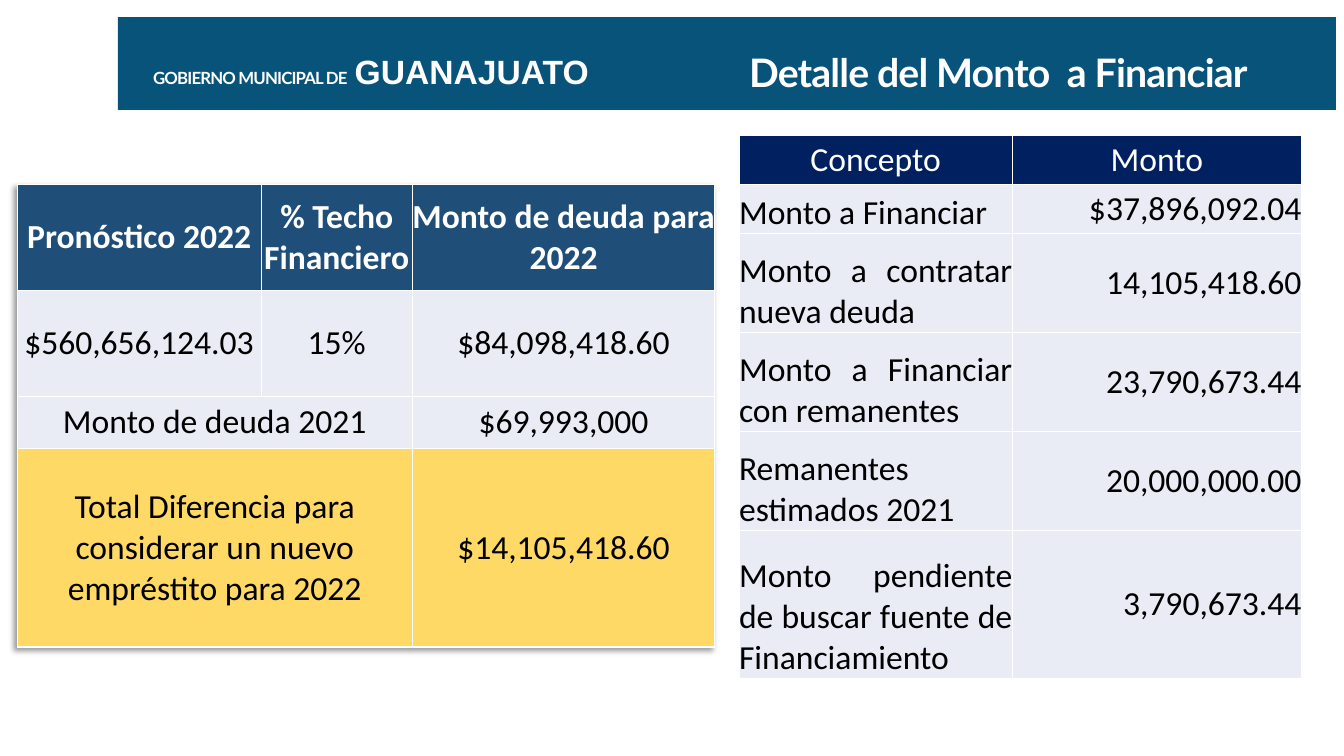
from lxml.etree import SubElement
from pptx import Presentation
from pptx.dml.color import RGBColor
from pptx.enum.shapes import MSO_SHAPE
from pptx.enum.text import MSO_ANCHOR, PP_ALIGN
from pptx.oxml import parse_xml
from pptx.oxml.ns import nsdecls, qn
from pptx.util import Inches, Pt

WHITE = RGBColor(0xFF, 0xFF, 0xFF)
BLACK = RGBColor(0x00, 0x00, 0x00)
BLUE = RGBColor(0x1F, 0x4E, 0x79)
NAVY = RGBColor(0x00, 0x20, 0x60)
PALE = RGBColor(0xE9, 0xEB, 0xF5)
GOLD = RGBColor(0xFF, 0xD9, 0x66)
TEAL = RGBColor(0x08, 0x53, 0x7A)

LATO = {"name": "Lato", "bold": True}
ARIAL = {"name": "Arial", "bold": True}
INSETS = {"margin_left": 0, "margin_right": 0, "margin_top": 0, "margin_bottom": 0}

DEBT = [
    ["Pronóstico 2022", "% Techo Financiero", "Monto de deuda para 2022"],
    ["$560,656,124.03", "15%", "$84,098,418.60"],
    ["Monto de deuda 2021", None, "$69,993,000"],
    ["Total Diferencia para considerar un nuevo empréstito para 2022", None,
     "$14,105,418.60"],
]
FUNDS = [
    ["Concepto", "Monto"],
    ["Monto a Financiar", "$37,896,092.04"],
    ["Monto a contratar nueva deuda", "14,105,418.60"],
    ["Monto a Financiar con remanentes", "23,790,673.44"],
    ["Remanentes estimados 2021", "20,000,000.00"],
    ["Monto pendiente de buscar fuente de Financiamiento", "3,790,673.44"],
]


def apply(item, values):
    for key, value in values.items():
        setattr(item, key, value)


def add_run(para, text, color, values, spacing=None):
    run = para.add_run()
    run.text = text
    apply(run.font, values)
    run.font.color.rgb = color
    if spacing is not None:
        run._r.get_or_add_rPr().set("spc", str(spacing))


def add_edges(cell):
    props = cell._tc.get_or_add_tcPr()
    for spot, side in enumerate(("lnL", "lnR", "lnT", "lnB")):
        props.insert(spot, parse_xml(
            f'<a:{side} {nsdecls("a")} w="12700"><a:solidFill>'
            f'<a:srgbClr val="{WHITE}"/></a:solidFill></a:{side}>'))


def style_cell(cell, text, fill, color, bold, align, anchor):
    apply(cell, INSETS | {"vertical_anchor": anchor})
    cell.fill.solid()
    cell.fill.fore_color.rgb = fill
    add_edges(cell)
    if text:
        para = cell.text_frame.paragraphs[0]
        para.alignment = align
        add_run(para, text, color, {"name": "Calibri", "size": Pt(24), "bold": bold})


def add_grid(slide, left, top, widths, heights, rows, fills, bold, aligns, anchors):
    frame = slide.shapes.add_table(
        len(rows), len(widths), Inches(left), Inches(top),
        Inches(sum(widths)), Inches(sum(heights)))
    table = frame.table
    for col, width in zip(table.columns, widths):
        col.width = Inches(width)
    for r, texts in enumerate(rows):
        table.rows[r].height = Inches(heights[r])
        head = r == 0
        for c, text in enumerate(texts):
            style_cell(
                table.cell(r, c), text, fills[r],
                WHITE if head else BLACK, bold and head,
                PP_ALIGN.CENTER if head else aligns[c],
                MSO_ANCHOR.MIDDLE if head else anchors[c])
            if text is None:
                table.cell(r, c - 1).merge(table.cell(r, c))
    return table


def add_shadow(table):
    table._tbl.tblPr.insert(0, parse_xml(
        f'<a:effectLst {nsdecls("a")}>'
        '<a:outerShdw blurRad="50800" dist="38100" dir="8100000" algn="tr" '
        'rotWithShape="0"><a:srgbClr val="000000"><a:alpha val="40000"/>'
        '</a:srgbClr></a:outerShdw></a:effectLst>'))


def add_band(slide):
    band = slide.shapes.add_shape(
        MSO_SHAPE.RECTANGLE, Inches(1.17), Inches(0.17), Inches(12.08), Inches(0.92))
    band.shadow.inherit = False
    band.fill.solid()
    band.fill.fore_color.rgb = TEAL
    band.line.fill.background()
    slide.shapes.title.element.addprevious(band.element)


def add_label(slide):
    box = slide.shapes.add_textbox(
        Inches(1.42), Inches(0.46), Inches(6.5), Inches(0.5))
    box.text_frame.word_wrap = True
    para = box.text_frame.paragraphs[0]
    add_run(para, "GOBIERNO MUNICIPAL DE", WHITE, LATO | {"size": Pt(12)}, -60)
    add_run(para, " ", WHITE, ARIAL | {"size": Pt(18)}, 0)
    add_run(para, "GUANAJUATO", WHITE, ARIAL | {"size": Pt(24)}, 0)


def set_title(slide):
    title = slide.shapes.title
    apply(title, {"left": Inches(7.33), "top": Inches(0.43),
                  "width": Inches(5.9), "height": Inches(0.57)})
    apply(title.text_frame, {"word_wrap": True, "vertical_anchor": MSO_ANCHOR.TOP})
    para = title.text_frame.paragraphs[0]
    apply(para, {"alignment": PP_ALIGN.LEFT, "line_spacing": 1.0})
    add_run(para, "Detalle del Monto  a Financiar", WHITE,
            LATO | {"size": Pt(28)}, -60)


def main():
    deck = Presentation()
    apply(deck, {"slide_width": Inches(13.33), "slide_height": Inches(7.5)})
    slide = deck.slides.add_slide(deck.slide_layouts[5])
    debt = add_grid(
        slide, 0.17, 1.83, [2.42, 1.5, 3], [1.05, 1.05, 0.52, 1.97], DEBT,
        [BLUE, PALE, PALE, GOLD], True,
        [PP_ALIGN.CENTER] * 3, [MSO_ANCHOR.MIDDLE] * 3)
    add_shadow(debt)
    add_grid(
        slide, 7.33, 1.34, [2.71, 2.87], [0.49] * 2 + [0.98] * 3 + [1.47], FUNDS,
        [NAVY] + [PALE] * 5, False,
        [PP_ALIGN.JUSTIFY, PP_ALIGN.RIGHT], [MSO_ANCHOR.BOTTOM, MSO_ANCHOR.MIDDLE])
    add_band(slide)
    set_title(slide)
    add_label(slide)
    deck.save("out.pptx")


if __name__ == "__main__":
    main()
